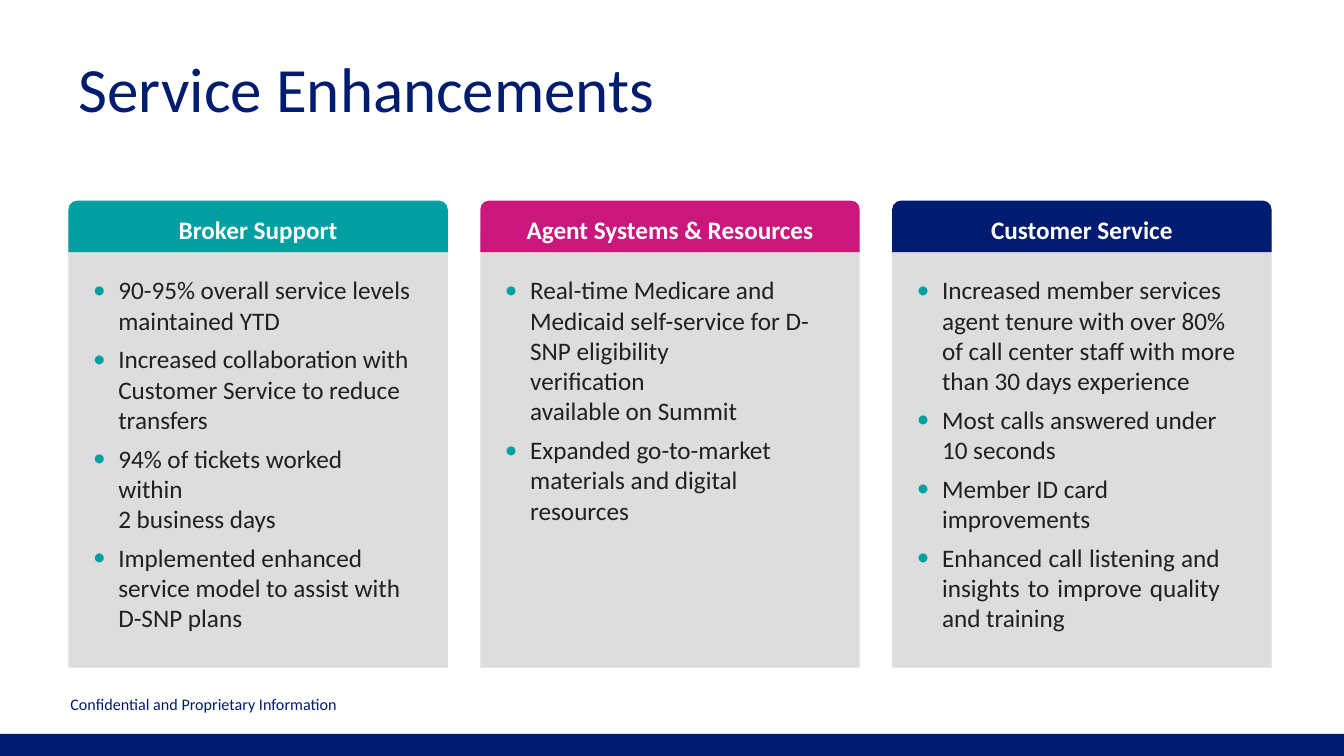
"""Build the Service Enhancements slide with three titled columns of bullets."""
from dataclasses import dataclass

from lxml.etree import SubElement
from pptx import Presentation
from pptx.dml.color import RGBColor as Color
from pptx.enum.shapes import MSO_SHAPE as Form
from pptx.enum.text import MSO_ANCHOR as Anchor, MSO_AUTO_SIZE as Fit, PP_ALIGN as Align
from pptx.oxml.ns import qn
from pptx.util import Pt

NAVY, TEAL, PINK = "001C70", "009FA2", "CA177C"
GREY, INK, WHITE = "DDDDDD", "202020", "FFFFFF"
LEFT, PITCH, WIDTH = 48.9, 294.2, 271


@dataclass
class Point:
    words: str
    align: Align = Align.LEFT
    right: float = 0


@dataclass
class Column:
    head: str
    color: str
    points: list[Point]


COLUMNS = [
    Column("Broker Support", TEAL, [
        Point("90-95% overall service levels maintained YTD"),
        Point("Increased collaboration with Customer Service to reduce transfers"),
        Point("94% of tickets worked\vwithin\v2 business days"),
        Point("Implemented enhanced service model to assist with D-SNP plans"),
    ]),
    Column("Agent Systems & Resources", PINK, [
        Point("Real-time Medicare and Medicaid self-service for D-SNP eligibility"
              "\vverification\vavailable on Summit"),
        Point("Expanded go-to-market materials and digital resources"),
    ]),
    Column("Customer Service", NAVY, [
        Point("Increased member services agent tenure with over 80% "
              "of call center staff with more than 30 days experience"),
        Point("Most calls answered under 10 seconds"),
        Point("Member ID card\vimprovements"),
        Point("Enhanced call listening and insights to improve quality and training",
              Align.JUSTIFY, 13),
    ]),
]


def paint(fill, code: str) -> None:
    fill.solid()
    fill.fore_color.rgb = Color.from_string(code)


def place(shape, left: float, top: float, width: float, height: float) -> None:
    shape.left, shape.top = Pt(left), Pt(top)
    shape.width, shape.height = Pt(width), Pt(height)


def block(slide, form: Form, code: str, left: float, top: float, width: float, height: float):
    shape = slide.shapes.add_shape(form, Pt(left), Pt(top), Pt(width), Pt(height))
    shape.shadow.inherit = False
    paint(shape.fill, code)
    shape.line.fill.background()
    return shape


def mark(para, right: float) -> None:
    props = para._p.get_or_add_pPr()
    props.set("marL", str(Pt(18.4)))
    props.set("marR", str(Pt(right)))
    props.set("indent", str(Pt(-18)))
    tint = SubElement(props, qn("a:buClr"))
    SubElement(tint, qn("a:srgbClr"), val=TEAL)
    SubElement(props, qn("a:buFont"), typeface="Calibri")
    SubElement(props, qn("a:buChar"), char="•")


def write(shape, points: list[Point], *, size: float, color: str, bold: bool = False,
          anchor: Anchor = Anchor.TOP, gap: float = 0, line: float | None = None,
          bullet: bool = False) -> None:
    frame = shape.text_frame
    frame.word_wrap, frame.auto_size = True, Fit.NONE
    frame.vertical_anchor = anchor
    frame.margin_left = frame.margin_top = frame.margin_right = frame.margin_bottom = 0
    for rank, point in enumerate(points):
        para = frame.add_paragraph() if rank else frame.paragraphs[0]
        para.text, para.alignment = point.words, point.align
        para.space_before = Pt(gap if rank else 0)
        if line:
            para.line_spacing = Pt(line)
        if bullet:
            mark(para, point.right)
        for run in para.runs:
            font = run.font
            font.name, font.size, font.bold = "Calibri", Pt(size), bold
            font.color.rgb = Color.from_string(color)


def draw(slide, column: Column, body, left: float) -> None:
    block(slide, Form.RECTANGLE, GREY, left, 166, WIDTH, 311)
    head = block(slide, Form.ROUND_2_SAME_RECTANGLE, column.color, left, 143.3, WIDTH, 36.7)
    head.adjustments[0] = 0.17
    write(head, [Point(column.head, Align.CENTER)], size=18, color=WHITE, bold=True,
          anchor=Anchor.MIDDLE)
    head.text_frame.margin_top = Pt(2)
    place(body, left + 17.2, 196.2, 230, 260)
    write(body, column.points, size=18, color=INK, gap=6.1, line=21.6, bullet=True)
    slide.shapes._spTree.append(body._element)


def main() -> None:
    deck = Presentation()
    deck.slide_width, deck.slide_height = Pt(960), Pt(540)
    slide = deck.slides.add_slide(deck.slide_layouts[4])
    title, *bodies, spare = slide.placeholders
    spare._element.getparent().remove(spare._element)

    block(slide, Form.RECTANGLE, NAVY, 0, 524.2, 960, 15.8)
    place(title, 56, 35.5, 850, 56)
    write(title, [Point("Service Enhancements")], size=45, color=NAVY)
    for rank, (column, body) in enumerate(zip(COLUMNS, bodies)):
        draw(slide, column, body, LEFT + rank * PITCH)
    note = slide.shapes.add_textbox(Pt(50.3), Pt(497.5), Pt(263), Pt(14.4))
    write(note, [Point("Confidential and Proprietary Information")], size=11.5, color=NAVY,
          line=12.2)
    deck.save("out.pptx")


if __name__ == "__main__":
    main()
